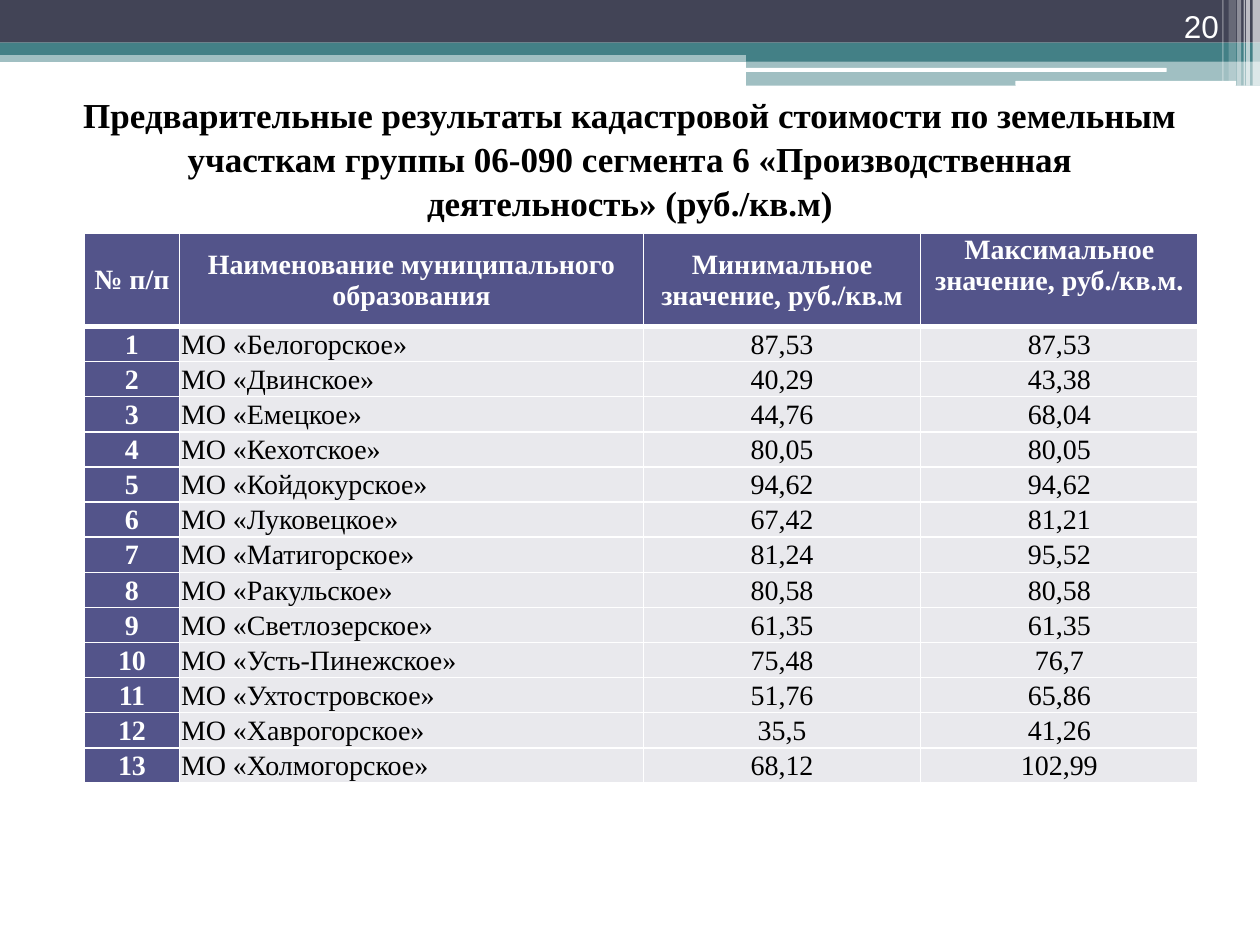
from lxml.etree import SubElement
from pptx import Presentation
from pptx.dml.color import RGBColor
from pptx.enum.shapes import MSO_SHAPE
from pptx.enum.text import MSO_ANCHOR, MSO_AUTO_SIZE, PP_ALIGN
from pptx.oxml.ns import qn
from pptx.util import Cm, Pt

WHITE = RGBColor(0xFF, 0xFF, 0xFF)
BLACK = RGBColor(0x00, 0x00, 0x00)
SLATE = RGBColor(0x42, 0x44, 0x56)
TEAL = RGBColor(0x43, 0x80, 0x86)
INDIGO = RGBColor(0x53, 0x54, 0x8A)
PALE = RGBColor(0xE9, 0xE9, 0xED)

BANDS = [
    (0, 1.02, 25.4, 0.23, TEAL, 50),
    (0, 0, 25.4, 0.86, SLATE, 100),
    (0, 0.86, 25.4, 0.25, TEAL, 100),
    (15.04, 0.99, 10.36, 0.25, TEAL, 100),
    (15.04, 1.22, 10.36, 0.51, TEAL, 50),
]
GAPS = [(15.01, 1.37, 8.51, 0.08), (20.47, 1.63, 4.45, 0.1)]
STRIPES = [
    (25.25, 0.15, 1.73, 65),
    (25.12, 0.08, 1.73, 65),
    (25.07, 0.03, 1.73, 60),
    (24.94, 0.08, 1.73, 40),
    (24.77, 0.15, 1.63, 20),
    (24.64, 0.03, 1.63, 30),
]

TITLE = ("Предварительные результаты кадастровой стоимости по земельным участкам "
         "группы 06-090 сегмента 6 «Производственная деятельность» (руб./кв.м)")
HEADERS = ["№ п/п", "Наименование муниципального образования",
           "Минимальное значение, руб./кв.м", "Максимальное значение, руб./кв.м."]
VALUES = [
    ("Белогорское", "87,53", "87,53"),
    ("Двинское", "40,29", "43,38"),
    ("Емецкое", "44,76", "68,04"),
    ("Кехотское", "80,05", "80,05"),
    ("Койдокурское", "94,62", "94,62"),
    ("Луковецкое", "67,42", "81,21"),
    ("Матигорское", "81,24", "95,52"),
    ("Ракульское", "80,58", "80,58"),
    ("Светлозерское", "61,35", "61,35"),
    ("Усть-Пинежское", "75,48", "76,7"),
    ("Ухтостровское", "51,76", "65,86"),
    ("Хаврогорское", "35,5", "41,26"),
    ("Холмогорское", "68,12", "102,99"),
]
COLUMN_WIDTHS = [1.92, 9.35, 5.59, 5.59]
HEADER_HEIGHT = 1.88
ROW_HEIGHT = 0.64


class SlideBuilder:
    font = "Times New Roman"
    table_size = 16

    def __init__(self, presentation):
        self.slide = presentation.slides.add_slide(presentation.slide_layouts[5])

    def add_text(self, frame, text, size, color, bold=False,
                 align=PP_ALIGN.CENTER, font=None):
        paragraph = frame.paragraphs[0]
        paragraph.alignment = align
        run = paragraph.add_run()
        run.text = text
        run.font.name = font or self.font
        run.font.size = Pt(size)
        run.font.bold = bold
        run.font.color.rgb = color
        return paragraph

    def block(self, left, top, width, height, color, opacity=100,
              kind=MSO_SHAPE.RECTANGLE):
        block = self.slide.shapes.add_shape(
            kind, Cm(left), Cm(top), Cm(width), Cm(height))
        block.shadow.inherit = False
        block.line.fill.background()
        block.fill.solid()
        block.fill.fore_color.rgb = color
        if opacity < 100:
            tint = block.element.spPr.find(qn("a:solidFill"))[0]
            SubElement(tint, qn("a:alpha"), val=str(opacity * 1000))

    def title(self, text, left, top, width, height):
        title = self.slide.shapes.title
        title.left, title.top = Cm(left), Cm(top)
        title.width, title.height = Cm(width), Cm(height)
        frame = title.text_frame
        frame.word_wrap = True
        frame.auto_size = MSO_AUTO_SIZE.NONE
        frame.vertical_anchor = MSO_ANCHOR.TOP
        self.add_text(frame, text, 20, BLACK, bold=True).line_spacing = 1.04

    def page_number(self, text, left, top, width, height):
        number = self.slide.shapes.add_textbox(
            Cm(left), Cm(top), Cm(width), Cm(height))
        frame = number.text_frame
        frame.word_wrap = True
        frame.vertical_anchor = MSO_ANCHOR.BOTTOM
        self.add_text(frame, text, 18, WHITE, align=PP_ALIGN.RIGHT, font="Arial")

    def border(self, cell, **widths):
        properties = cell._tc.get_or_add_tcPr()
        for index, side in enumerate("LRTB"):
            line = properties.makeelement(
                qn(f"a:ln{side}"), {"w": str(Pt(widths.get(side, 1)))})
            fill = SubElement(line, qn("a:solidFill"))
            SubElement(fill, qn("a:srgbClr"), val=str(WHITE))
            properties.insert(index, line)

    def cell(self, cell, text, row, column):
        strong = row == 0 or column == 0
        cell.fill.solid()
        cell.fill.fore_color.rgb = INDIGO if strong else PALE
        cell.margin_left = cell.margin_right = cell.margin_top = Cm(0.03)
        cell.margin_bottom = 0
        raised = row == 0 and column == len(HEADERS) - 1
        cell.vertical_anchor = MSO_ANCHOR.TOP if raised else MSO_ANCHOR.MIDDLE
        named = row > 0 and column == 1
        self.add_text(cell.text_frame, text, self.table_size,
                      WHITE if strong else BLACK, bold=strong,
                      align=PP_ALIGN.LEFT if named else PP_ALIGN.CENTER)
        self.border(cell, T=3 if row == 1 else 1, B=3 if row == 0 else 1)

    def table(self, rows, left, top):
        height = HEADER_HEIGHT + ROW_HEIGHT * (len(rows) - 1)
        table = self.slide.shapes.add_table(
            len(rows), len(COLUMN_WIDTHS), Cm(left), Cm(top),
            Cm(sum(COLUMN_WIDTHS)), Cm(height)).table
        table.horz_banding = False
        for column, width in zip(table.columns, COLUMN_WIDTHS):
            column.width = Cm(width)
        for r, texts in enumerate(rows):
            table.rows[r].height = Cm(ROW_HEIGHT if r else HEADER_HEIGHT)
            for c, text in enumerate(texts):
                self.cell(table.cell(r, c), text, r, c)


def main():
    presentation = Presentation()
    presentation.slide_width = Cm(25.4)
    presentation.slide_height = Cm(19.05)
    builder = SlideBuilder(presentation)
    for band in BANDS:
        builder.block(*band)
    for gap in GAPS:
        builder.block(*gap, WHITE, kind=MSO_SHAPE.ROUNDED_RECTANGLE)
    for left, width, height, opacity in STRIPES:
        builder.block(left, 0, width, height, WHITE, opacity)
    builder.page_number("20", 22.71, 0, 2.11, 1.02)
    rows = [HEADERS] + [
        (str(number), f"МО «{name}»", lowest, highest)
        for number, (name, lowest, highest) in enumerate(VALUES, 1)]
    builder.table(rows, 1.7, 4.7)
    builder.title(TITLE, 1.27, 1.73, 22.86, 2.97)
    presentation.save("out.pptx")


if __name__ == "__main__":
    main()
